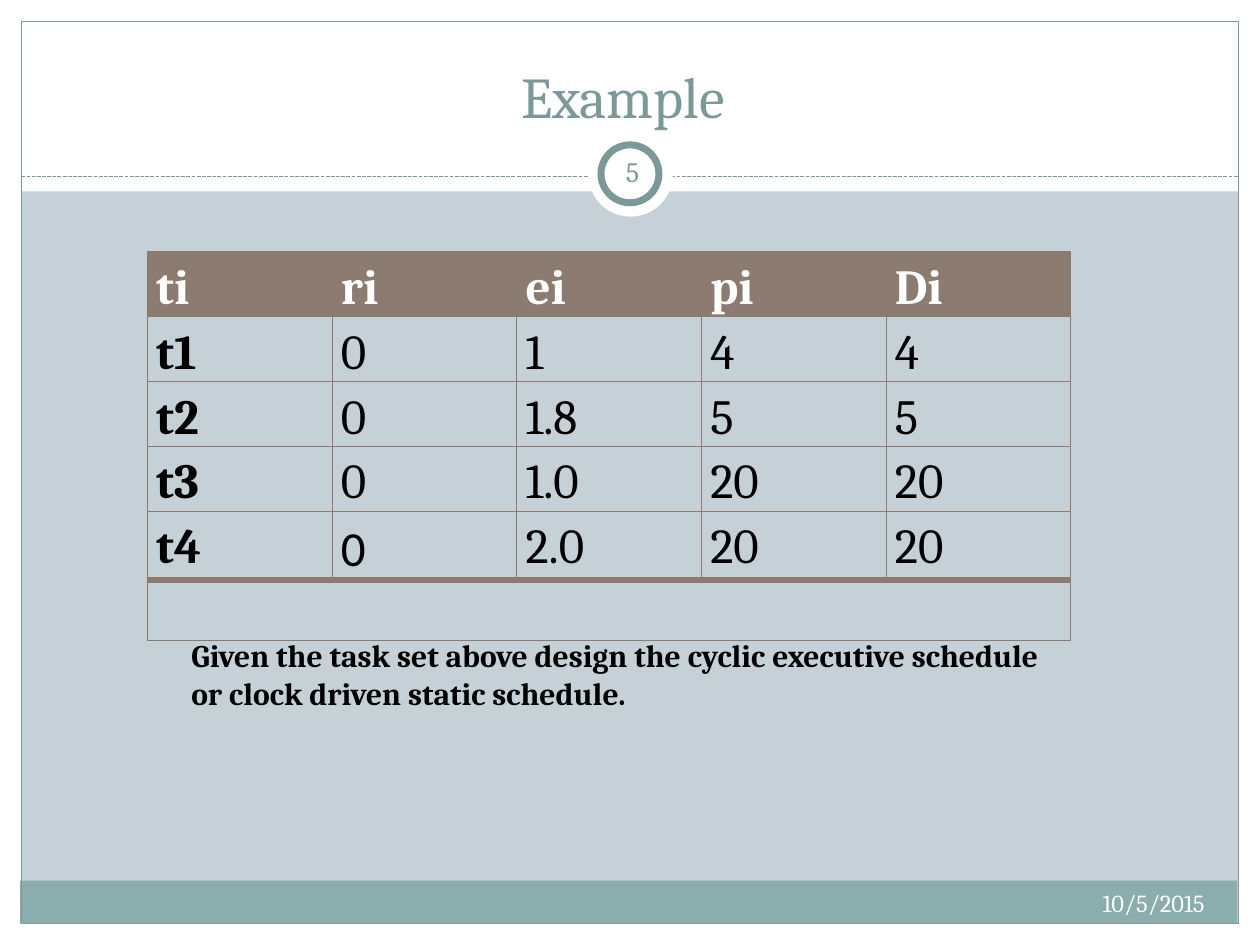
from dataclasses import dataclass

from lxml import etree
from pptx import Presentation
from pptx.dml.color import RGBColor
from pptx.enum.dml import MSO_LINE
from pptx.enum.shapes import MSO_CONNECTOR, MSO_SHAPE
from pptx.enum.text import MSO_ANCHOR, PP_ALIGN
from pptx.oxml.ns import qn
from pptx.util import Inches, Pt

RECTANGLE, OVAL = MSO_SHAPE.RECTANGLE, MSO_SHAPE.OVAL
STRAIGHT, DASH = MSO_CONNECTOR.STRAIGHT, MSO_LINE.SQUARE_DOT
LEFT, CENTER, RIGHT = PP_ALIGN.LEFT, PP_ALIGN.CENTER, PP_ALIGN.RIGHT
TOP, MIDDLE, BOTTOM = MSO_ANCHOR.TOP, MSO_ANCHOR.MIDDLE, MSO_ANCHOR.BOTTOM

COLORS = {
    "background": "C5D1D7",
    "white": "FFFFFF",
    "black": "000000",
    "footer": "8CADAE",
    "accent": "7C999A",
    "table": "8C7B70",
}
TASKS = [
    ["ti", "ri", "ei", "pi", "Di"],
    ["t1", "0", "1", "4", "4"],
    ["t2", "0", "1.8", "5", "5"],
    ["t3", "0", "1.0", "20", "20"],
    ["t4", "0", "2.0", "20", "20"],
    [""] * 5,
]


@dataclass
class Panel:
    left: float
    top: float
    width: float
    height: float
    fill: str = ""
    line: str = ""
    weight: float = 0.75
    kind: int = RECTANGLE


@dataclass
class Label:
    lines: list[str]
    left: float
    top: float
    width: float
    height: float
    size: float
    color: str
    align: int = LEFT
    anchor: int = TOP
    bold: bool = False
    wrap: bool = True
    inset: tuple[float, float] = (0.1, 0.05)


PANELS = [
    Panel(0, 7.33, 10, 0.17, "white"),
    Panel(0, 0, 10, 1.52, "white"),
    Panel(0, 0, 0.17, 7.5, "white"),
    Panel(9.83, 0, 0.17, 7.5, "white"),
    Panel(0.16, 6.99, 9.66, 0.34, "footer"),
    Panel(0.17, 0.17, 9.66, 7.16, line="accent"),
]
BADGE = [
    Panel(4.67, 1.05, 0.67, 0.67, "white", kind=OVAL),
    Panel(4.77, 1.15, 0.46, 0.46, "white", "accent", 4, OVAL),
]
LABELS = [
    Label(["Example "], 0.33, 0.25, 9.33, 0.83, 33, "accent", CENTER, BOTTOM),
    Label(["10/5/2015"], 6.33, 7, 3.33, 0.4, 14, "white", RIGHT),
    Label(["5"], 4.77, 1.12, 0.5, 0.48, 16, "accent", CENTER, MIDDLE, inset=(0.05, 0.05)),
    Label(
        ["Given the task set above design the cyclic executive schedule",
         "or clock driven static schedule."],
        1.42, 5, 8.05, 0.71, 18, "black", bold=True, wrap=False,
    ),
]


def rgb(name: str) -> RGBColor:
    """Return the named colour."""
    return RGBColor.from_string(COLORS[name])


def style_text(para, size: float, color: str, bold: bool, font: str = "Cambria") -> None:
    """Format every run of a paragraph."""
    for span in para.runs:
        span.font.name = font
        span.font.size = Pt(size)
        span.font.bold = bold
        span.font.color.rgb = rgb(color)


def draw_panel(page, panel: Panel) -> None:
    """Draw a filled or outlined preset shape."""
    shape = page.shapes.add_shape(
        panel.kind, Inches(panel.left), Inches(panel.top), Inches(panel.width), Inches(panel.height))
    shape.shadow.inherit = False
    if panel.fill:
        shape.fill.solid()
        shape.fill.fore_color.rgb = rgb(panel.fill)
    else:
        shape.fill.background()
    if panel.line:
        shape.line.color.rgb = rgb(panel.line)
        shape.line.width = Pt(panel.weight)
    else:
        shape.line.fill.background()


def draw_divider(page) -> None:
    """Draw the dashed line under the title."""
    divider = page.shapes.add_connector(STRAIGHT, Inches(0.17), Inches(1.4), Inches(9.83), Inches(1.4))
    divider.line.color.rgb = rgb("accent")
    divider.line.width = Pt(0.75)
    divider.line.dash_style = DASH
    etree.SubElement(divider._element.spPr, qn("a:effectLst"))


def draw_label(page, label: Label) -> None:
    """Draw a text box with one paragraph per line."""
    box = page.shapes.add_textbox(
        Inches(label.left), Inches(label.top), Inches(label.width), Inches(label.height))
    frame = box.text_frame
    frame.text = "\n".join(label.lines)
    frame.word_wrap = label.wrap
    frame.vertical_anchor = label.anchor
    frame.margin_left = frame.margin_right = Inches(label.inset[0])
    frame.margin_top = frame.margin_bottom = Inches(label.inset[1])
    for para in frame.paragraphs:
        para.alignment = label.align
        style_text(para, label.size, label.color, label.bold)


def set_borders(cell, weights: dict[str, float]) -> None:
    """Set the cell borders, where a weight of zero hides the side."""
    properties = cell._tc.get_or_add_tcPr()
    for index, (side, weight) in enumerate(weights.items()):
        line = etree.Element(qn(f"a:ln{side}"), w=str(Pt(weight)))
        if weight:
            fill = etree.SubElement(line, qn("a:solidFill"))
            etree.SubElement(fill, qn("a:srgbClr"), val=COLORS["table"])
        else:
            etree.SubElement(line, qn("a:noFill"))
        properties.insert(index, line)


def draw_task_table(page) -> None:
    """Draw the task set with its header and empty closing row."""
    last_row, last_column = len(TASKS) - 1, len(TASKS[0]) - 1
    table = page.shapes.add_table(
        len(TASKS), len(TASKS[0]), Inches(1.17), Inches(2), Inches(7.33), Inches(2.4)).table
    table.horz_banding = False
    for row_index, values in enumerate(TASKS):
        closing = row_index == last_row
        table.rows[row_index].height = Inches(0.48 if closing else 0.4)
        for column_index, value in enumerate(values):
            cell = table.cell(row_index, column_index)
            header = row_index == 0
            if header:
                cell.fill.solid()
                cell.fill.fore_color.rgb = rgb("table")
            else:
                cell.fill.background()
            set_borders(cell, {
                "L": 0 if closing and column_index > 0 else 0.75,
                "R": 0 if closing and column_index < last_column else 0.75,
                "T": 4 if closing else 0.75,
                "B": 4 if row_index == last_row - 1 else 0.75,
            })
            if closing:
                continue
            cell.margin_left = cell.margin_right = Inches(0.07)
            cell.margin_top = cell.margin_bottom = 0
            cell.text_frame.text = value
            para = cell.text_frame.paragraphs[0]
            para.line_spacing = 1.15
            font = "Calibri" if (row_index, column_index) == (4, 1) else "Cambria"
            style_text(para, 28, "white" if header else "black", header or column_index == 0, font)


def main() -> None:
    """Build the slide and save the deck."""
    deck = Presentation()
    deck.slide_width, deck.slide_height = Inches(10), Inches(7.5)
    page = deck.slides.add_slide(deck.slide_layouts[6])
    page.background.fill.solid()
    page.background.fill.fore_color.rgb = rgb("background")
    for panel in PANELS:
        draw_panel(page, panel)
    draw_divider(page)
    for panel in BADGE:
        draw_panel(page, panel)
    draw_task_table(page)
    for label in LABELS:
        draw_label(page, label)
    deck.save("out.pptx")


if __name__ == "__main__":
    main()
